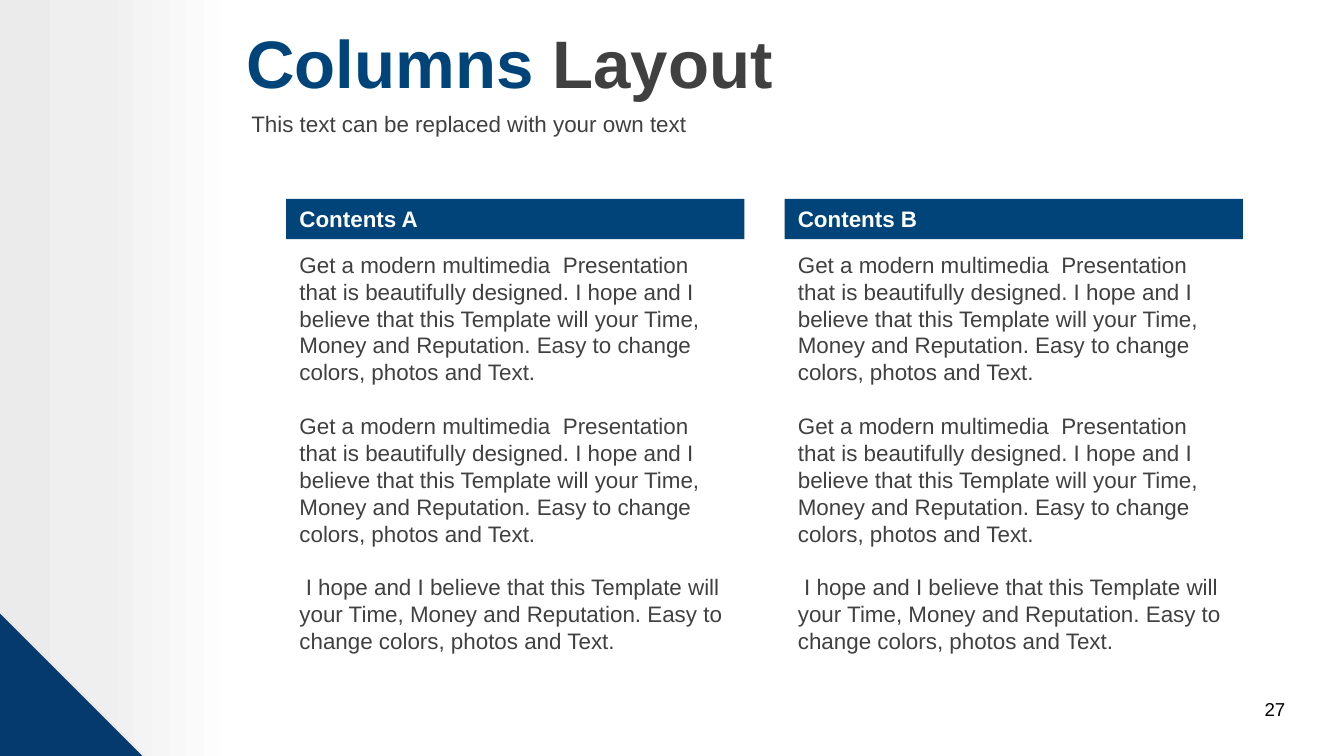
import copy
from dataclasses import dataclass

from lxml import etree
from pptx import Presentation
from pptx.dml.color import RGBColor
from pptx.enum import shapes, text
from pptx.oxml import ns
from pptx.util import Cm, Pt

NAVY, GREY, WHITE, BLACK = "004479", "404040", "FFFFFF", "000000"
LEFT, RIGHT = text.PP_ALIGN.LEFT, text.PP_ALIGN.RIGHT
LINE = 14.4  # pitch of the body lines in points

PITCH = ("Get a modern multimedia  Presentation that is beautifully designed. "
         "I hope and I believe that this Template will your Time, Money and "
         "Reputation. Easy to change colors, photos and Text.")
CLOSING = ("I hope and I believe that this Template will your Time, Money and "
           "Reputation. Easy to change colors, photos and Text.")


@dataclass
class Box:
    left: float
    top: float
    width: float
    height: float

    def lengths(self):
        return [Cm(v) for v in (self.left, self.top, self.width, self.height)]


@dataclass
class Column:
    heading: str
    paragraphs: tuple


def rgb(value: str) -> RGBColor:
    return RGBColor.from_string(value)


def style(font, size: float, color: str, bold: bool = False) -> None:
    font.name, font.size, font.bold = "Arial", Pt(size), bold
    font.color.rgb = rgb(color)


def add_block(slide, kind, box: Box, color: str):
    block = slide.shapes.add_shape(kind, *box.lengths())
    block.shadow.inherit = False
    block.fill.solid()
    block.fill.fore_color.rgb = rgb(color)
    block.line.fill.background()
    return block


def add_text(slide, box: Box, lines, size: float, color: str, align=LEFT):
    frame = slide.shapes.add_textbox(*box.lengths()).text_frame
    frame.word_wrap = True
    for i, line in enumerate(lines):
        paragraph = frame.add_paragraph() if i else frame.paragraphs[0]
        paragraph.text, paragraph.alignment = line, align
        style(paragraph.font, size, color)
    return frame


def add_side_band(slide) -> None:
    band = add_block(slide, shapes.MSO_SHAPE.RECTANGLE, Box(0, 0, 4.5, 14.29), WHITE)
    band.fill.gradient()
    band.fill.gradient_angle = 0
    stop_list = band._element.spPr.find(".//" + ns.qn("a:gsLst"))
    stop_list.insert(1, copy.deepcopy(stop_list[0]))
    stops = ((0, "EBEBEB"), (0.42, "EFEFEF"), (1, WHITE))
    for stop, (position, color) in zip(band.fill.gradient_stops, stops):
        stop.position, stop.color.rgb = position, rgb(color)


def add_corner(slide) -> None:
    corner = add_block(slide, shapes.MSO_SHAPE.RIGHT_TRIANGLE,
                       Box(-0.02, 11.58, 2.71, 2.71), "053A6F")
    effects = corner._element.spPr.find(ns.qn("a:effectLst"))
    shadow = etree.SubElement(effects, ns.qn("a:outerShdw"), blurRad=str(Pt(3.1)),
                              dist=str(Pt(1.8)), dir="5400000", rotWithShape="0")
    shade = etree.SubElement(shadow, ns.qn("a:srgbClr"), val=BLACK)
    etree.SubElement(shade, ns.qn("a:alpha"), val="35000")


def add_title(slide) -> None:
    title = slide.shapes.title
    title.left, title.top, title.width, title.height = Box(4.4, 0.08, 21, 2.16).lengths()
    title.text_frame.vertical_anchor = text.MSO_ANCHOR.MIDDLE
    paragraph = title.text_frame.paragraphs[0]
    paragraph.alignment = LEFT
    for words, color in (("Columns", NAVY), (" Layout", GREY)):
        run = paragraph.add_run()
        run.text = words
        style(run.font, 36, color, bold=True)


def add_column(slide, column: Column, left: float) -> None:
    width = 8.66
    # Body: the last paragraph starts slightly indented
    body = add_text(slide, Box(left, 4.62, width, 8), column.paragraphs, 12, GREY)
    for paragraph in body.paragraphs:
        paragraph.line_spacing = paragraph.space_after = Pt(LINE)
    body.paragraphs[-1]._p.get_or_add_pPr().set("indent", str(Cm(0.12)))
    # Heading bar
    bar = add_block(slide, shapes.MSO_SHAPE.RECTANGLE, Box(left, 3.76, width, 0.76), NAVY)
    bar.text_frame.vertical_anchor = text.MSO_ANCHOR.MIDDLE
    heading = bar.text_frame.paragraphs[0]
    heading.text, heading.alignment = column.heading, LEFT
    style(heading.font, 12, WHITE, bold=True)


def main() -> None:
    deck = Presentation()
    deck.slide_width, deck.slide_height = Cm(25.4), Cm(14.29)
    slide = deck.slides.add_slide(deck.slide_layouts[5])

    # Background decoration
    add_side_band(slide)
    add_corner(slide)

    # Title and subtitle
    add_title(slide)
    add_text(slide, Box(4.5, 1.96, 20.9, 0.74),
             ["This text can be replaced with your own text"], 12, GREY)

    # Content columns
    copy_text = (PITCH, PITCH, CLOSING)
    for i, name in enumerate("AB"):
        add_column(slide, Column(f"Contents {name}", copy_text), 5.41 + i * 9.42)

    # Page number
    add_text(slide, Box(18.62, 13.06, 5.92, 0.76), ["27"], 10, BLACK, RIGHT)

    deck.save("out.pptx")


if __name__ == "__main__":
    main()
